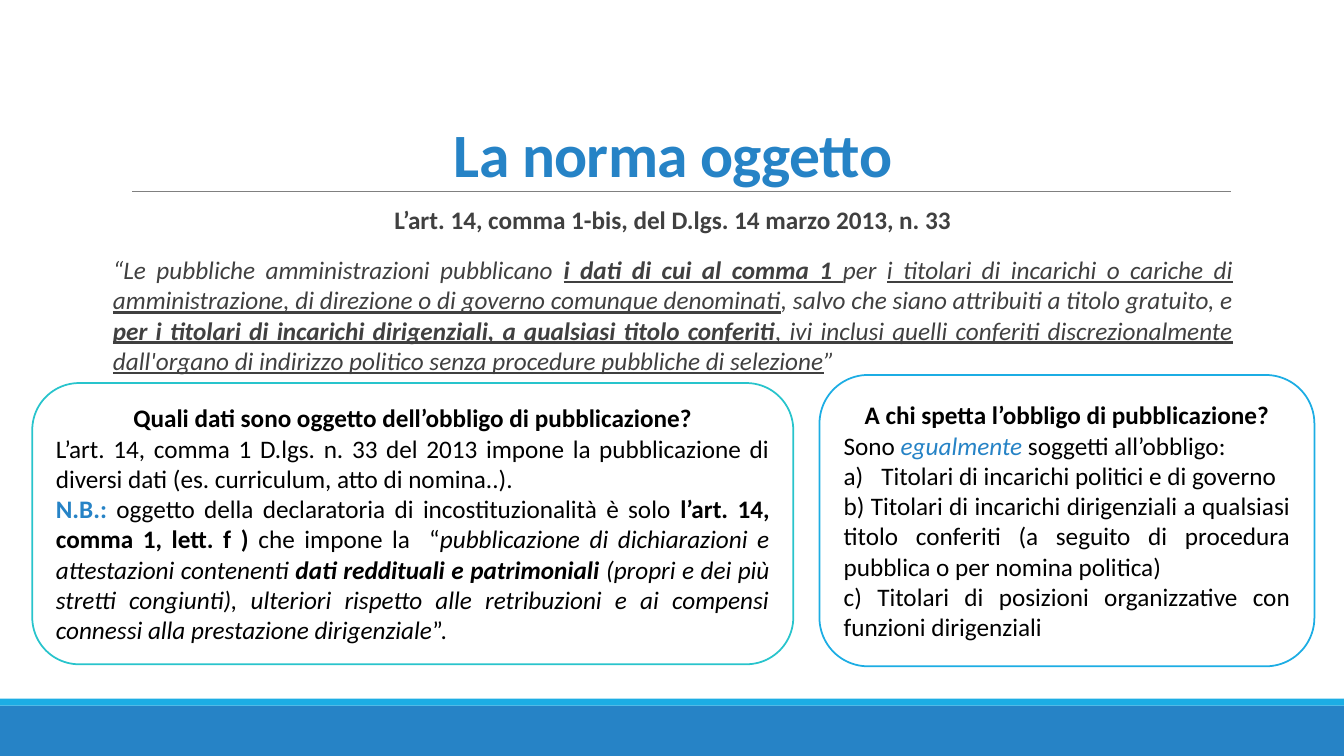
from pptx import Presentation
from pptx.dml.color import RGBColor
from pptx.enum.shapes import MSO_CONNECTOR, MSO_SHAPE
from pptx.enum.text import MSO_ANCHOR, PP_ALIGN
from pptx.oxml.ns import qn
from pptx.util import Pt
from lxml import etree

RECT, ROUND = MSO_SHAPE.RECTANGLE, MSO_SHAPE.ROUNDED_RECTANGLE
MID, LOW, TOP = MSO_ANCHOR.MIDDLE, MSO_ANCHOR.BOTTOM, MSO_ANCHOR.TOP
MID_AL, JUST = PP_ALIGN.CENTER, PP_ALIGN.JUSTIFY

BLUE = RGBColor(0x26, 0x83, 0xC6)
SKY = RGBColor(0x1C, 0xAD, 0xE4)
TEAL = RGBColor(0x28, 0xC4, 0xCC)
GREY = RGBColor(0x80, 0x80, 0x80)
DARK = RGBColor(0x40, 0x40, 0x40)
BLACK = RGBColor(0, 0, 0)
WHITE = RGBColor(0xFF, 0xFF, 0xFF)

# Content: paragraphs are (alignment, runs); a run is (text, style),
# with style letters b = bold, i = italic, u = underline, c = accent colour
TITLE = [(MID_AL, [("La norma oggetto", "bc")])]

LAW = [
    (MID_AL, [("L’art. 14, comma 1-bis, del D.lgs. 14 marzo 2013, n. 33", "b")]),
    (JUST, [
        ("“Le pubbliche amministrazioni pubblicano ", "i"),
        ("i dati di cui al comma 1 ", "biu"),
        ("per ", "i"),
        ("i titolari di incarichi o cariche di amministrazione, di direzione "
         "o di governo comunque denominati", "iu"),
        (", salvo che siano attribuiti a titolo gratuito, e ", "i"),
        ("per i titolari di incarichi dirigenziali, a qualsiasi titolo "
         "conferiti", "biu"),
        (", ivi inclusi quelli conferiti discrezionalmente dall'organo di "
         "indirizzo politico senza procedure pubbliche di selezione", "iu"),
        ("” ", "i"),
    ]),
]

DATA = [
    (MID_AL, [("Quali dati sono oggetto dell’obbligo di pubblicazione?", "b")]),
    (JUST, [("L’art. 14, comma 1 D.lgs. n. 33 del 2013 impone la pubblicazione "
             "di diversi dati (es. curriculum, atto di nomina..).", "")]),
    (JUST, [
        ("N.B.: ", "bc"),
        ("oggetto della declaratoria di incostituzionalità è solo ", ""),
        ("l’art. 14, comma 1, lett. f ) ", "b"),
        ("che impone la  “", ""),
        ("pubblicazione di dichiarazioni e attestazioni contenenti ", "i"),
        ("dati reddituali e patrimoniali ", "bi"),
        ("(propri e dei più stretti congiunti), ulteriori rispetto alle "
         "retribuzioni e ai compensi connessi alla prestazione dirigenziale", "i"),
        ("”.", ""),
    ]),
]

WHO = [
    (MID_AL, [("A chi spetta l’obbligo di pubblicazione?", "b")]),
    (JUST, [("Sono ", ""), ("egualmente ", "ic"), ("soggetti all’obbligo: ", "")]),
    (JUST, [("Titolari di incarichi politici e di governo", "")]),
    (JUST, [("b) Titolari di incarichi dirigenziali a qualsiasi titolo conferiti "
             "(a seguito di procedura pubblica o per nomina politica)", "")]),
    (JUST, [("c) Titolari di posizioni organizzative con funzioni "
             "dirigenziali ", "")]),
]

# Boxes as left, top, width, height
WIDE, HIGH = 960, 540
BASE, STRIP = 36, 5
BANDS = [
    ((0, HIGH - BASE, WIDE, BASE), BLUE),
    ((0, HIGH - BASE - STRIP, WIDE, STRIP), SKY),
]
CARDS = [
    ((23.04, 273.6, 543.6, 200.88), TEAL, DATA),
    ((585.36, 267.84, 353.52, 208.08), SKY, WHO),
]

deck = Presentation()
deck.slide_width, deck.slide_height = Pt(WIDE), Pt(HIGH)
slide = deck.slides.add_slide(deck.slide_layouts[6])
shapes = slide.shapes


def block(kind, box, fill, line=None):
    shape = shapes.add_shape(kind, *map(Pt, box))
    shape.shadow.inherit = False
    shape.fill.solid()
    shape.fill.fore_color.rgb = fill
    if line is None:
        shape.line.fill.background()
    else:
        shape.line.color.rgb = line
        shape.line.width = Pt(1.25)
    return shape


def write(shape, paras, anchor, size=18, color=BLACK, **form):
    frame = shape.text_frame
    frame.word_wrap = True
    frame.vertical_anchor = anchor
    for n, (align, runs) in enumerate(paras):
        para = frame.paragraphs[0] if n == 0 else frame.add_paragraph()
        para.alignment = align
        for name, value in form.items():
            setattr(para, name, value)
        for text, style in runs:
            run = para.add_run()
            run.text = text
            looks = {"name": "Calibri", "size": Pt(size), "bold": "b" in style,
                     "italic": "i" in style, "underline": "u" in style}
            for name, value in looks.items():
                setattr(run.font, name, value)
            run.font.color.rgb = BLUE if "c" in style else color
    return frame


# Footer bands and title rule
for box, fill in BANDS:
    block(RECT, box, fill)
rule = shapes.add_connector(MSO_CONNECTOR.STRAIGHT, Pt(94.32), Pt(136.8),
                            Pt(879.12), Pt(136.8))
rule.line.color.rgb = GREY
rule.line.width = Pt(0.5)
etree.SubElement(rule.element.spPr, qn("a:effectLst"))

# Title
head = shapes.add_textbox(Pt(84.96), Pt(24.48), Pt(792), Pt(114.48))
frame = write(head, TITLE, LOW, 44, line_spacing=0.85)
frame.paragraphs[0].runs[0].font._element.set("spc", "-50")

# Text of the law
law = shapes.add_textbox(Pt(80.64), Pt(142.56), Pt(799.92), Pt(194.4))
frame = write(law, LAW, TOP, color=DARK, space_before=Pt(12), space_after=Pt(2))
frame.margin_left = frame.margin_right = 0

# Question cards
for box, line, paras in CARDS:
    frame = write(block(ROUND, box, WHITE, line), paras, MID)

# Lettered item in the last card
props = frame.paragraphs[2]._p.get_or_add_pPr()
props.set("marL", str(Pt(27)))
props.set("indent", str(-Pt(27)))
font = etree.SubElement(props, qn("a:buFont"))
font.set("typeface", "Calibri")
mark = etree.SubElement(props, qn("a:buAutoNum"))
mark.set("type", "alphaLcParenR")

deck.save("out.pptx")
